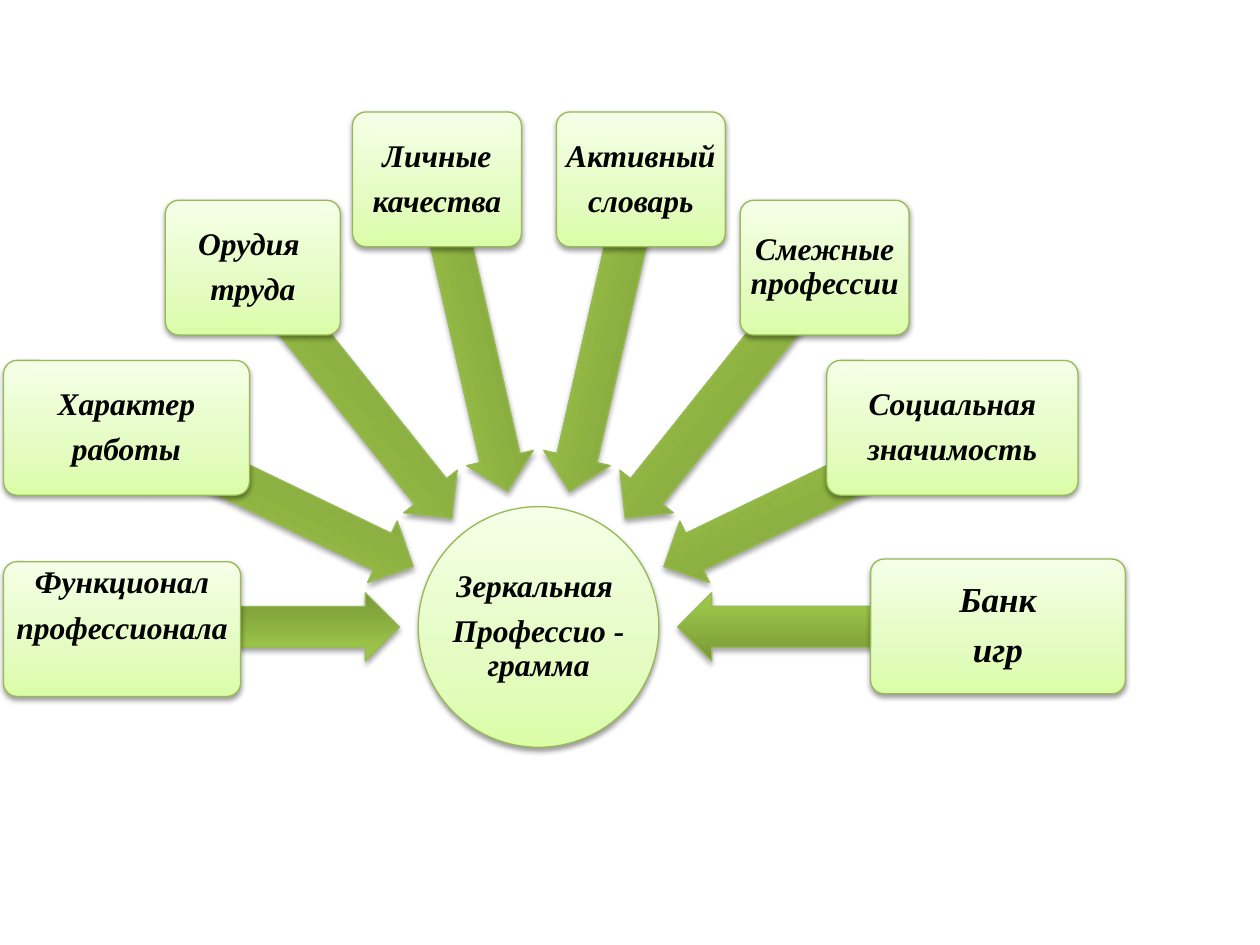
import math

import pptx
import pptx.dml.color
import pptx.enum.shapes
import pptx.enum.text
import pptx.oxml.ns
import pptx.util
from lxml import etree

Pt = pptx.util.Pt
RGBColor = pptx.dml.color.RGBColor
SHAPES = pptx.enum.shapes.MSO_SHAPE

BLACK = RGBColor(0x00, 0x00, 0x00)
OUTLINE = RGBColor(0x98, 0xB9, 0x55)
# Gradient stops from bottom to top: percent, colour
PALE_GREEN = [(0, RGBColor(0xDA, 0xFD, 0xA7)), (35, RGBColor(0xE4, 0xFC, 0xC2)),
              (100, RGBColor(0xF5, 0xFF, 0xE7))]
DEEP_GREEN = [(0, RGBColor(0x77, 0x97, 0x37)), (80, RGBColor(0x9B, 0xC3, 0x48)),
              (100, RGBColor(0x9D, 0xC7, 0x46))]

FONT = "Times New Roman"
HUB_BOX = (239, 289.5, 137.5, 137.5)
CARD_HEIGHT = 77
ARROW_HEIGHT = 39
ARROW_LENGTH = 183
TIP_DISTANCE = 79.5

# Cards clockwise from the left: left, top, width, lines, font size,
# extra bottom inset, arrow length
CARDS = [
    (2, 321, 135.5, ["Функционал", "профессионала"], 18, 26, 160.5),
    (2, 206, 140.5, ["Характер", "работы"], 18, 0, ARROW_LENGTH),
    (94.5, 114.5, 100, ["Орудия ", "труда"], 18, 0, ARROW_LENGTH),
    (201.5, 64, 96.5, ["Личные", "качества"], 18, 0, ARROW_LENGTH),
    (318, 64, 96.5, ["Активный", "словарь"], 18, 0, ARROW_LENGTH),
    (423, 114.5, 96.5, ["Смежные профессии"], 18, 0, ARROW_LENGTH),
    (472.5, 206, 143.5, ["Социальная", "значимость"], 18, 0, ARROW_LENGTH),
    (497.5, 319.5, 145.5, ["Банк", "игр"], 20, 0, ARROW_LENGTH),
]


def points(box):
    return [Pt(value) for value in box]


def add_child(parent, tag, **attributes):
    return etree.SubElement(parent, pptx.oxml.ns.qn(tag), attributes)


def add_glossy_shape(page, kind, box, stops, shadow_alpha, shadow_distance):
    """Add a shape with a vertical gradient, thin outline and soft shadow."""
    shape = page.shapes.add_shape(kind, *points(box))
    shape.line.color.rgb = OUTLINE
    shape.line.width = Pt(0.75)

    # Gradient
    shape.fill.gradient()
    shape.fill.gradient_angle = 90
    properties = shape._element.spPr
    stop_list = properties.find(".//" + pptx.oxml.ns.qn("a:gsLst"))
    for stop in list(stop_list):
        stop_list.remove(stop)
    for percent, colour in stops:
        stop = add_child(stop_list, "a:gs", pos=str(percent * 1000))
        add_child(stop, "a:srgbClr", val=str(colour))

    # Shadow straight below
    shape.shadow.inherit = False
    effects = properties.find(pptx.oxml.ns.qn("a:effectLst"))
    shadow = add_child(effects, "a:outerShdw", blurRad=str(Pt(3.1)),
                       dist=str(Pt(shadow_distance)), dir="5400000",
                       rotWithShape="0")
    colour = add_child(shadow, "a:srgbClr", val=str(BLACK))
    add_child(colour, "a:alpha", val=str(shadow_alpha * 1000))
    return shape


def write_lines(shape, lines, size, inset, extra_bottom=0):
    frame = shape.text_frame
    frame.word_wrap = True
    frame.vertical_anchor = pptx.enum.text.MSO_ANCHOR.MIDDLE
    frame.margin_left = frame.margin_right = frame.margin_top = Pt(inset)
    frame.margin_bottom = Pt(inset + extra_bottom)
    frame.text = "\n".join(lines)
    for para in frame.paragraphs:
        para.alignment = pptx.enum.text.PP_ALIGN.CENTER
        para.line_spacing = 0.9
        para.space_after = Pt(0.35 * size)
        for span in para.runs:
            span.font.name = FONT
            span.font.size = Pt(size)
            span.font.bold = span.font.italic = True
            span.font.color.rgb = BLACK


def add_hub(page, box):
    add_glossy_shape(page, SHAPES.OVAL, box, PALE_GREEN, 38, 1.6)
    # The label uses the full width of the circle
    label = page.shapes.add_textbox(*points(box))
    write_lines(label, ["Зеркальная ", "Профессио - грамма"], 18, 0.7)


def add_arrow(page, hub_box, angle, length):
    """Add an arrow that points at the hub from the given angle."""
    left, top, width, height = hub_box
    distance = TIP_DISTANCE + length / 2
    center_x = left + width / 2 + distance * math.cos(math.radians(angle))
    center_y = top + height / 2 + distance * math.sin(math.radians(angle))
    box = (center_x - length / 2, center_y - ARROW_HEIGHT / 2, length, ARROW_HEIGHT)
    arrow = add_glossy_shape(page, SHAPES.LEFT_ARROW, box, DEEP_GREEN, 35, 1.8)
    arrow.adjustments[0] = 0.6
    arrow.adjustments[1] = 0.5
    arrow.rotation = angle % 360


def add_card(page, box, lines, size, extra_bottom):
    card = add_glossy_shape(page, SHAPES.ROUNDED_RECTANGLE, box, PALE_GREEN, 38, 1.6)
    card.adjustments[0] = 0.1
    write_lines(card, lines, size, 0.6, extra_bottom)


def add_radial_diagram(page, hub_box):
    add_hub(page, hub_box)
    # Arrows fan out evenly over the upper half circle
    step = 180 / (len(CARDS) - 1)
    for index, (left, top, width, lines, size, extra, length) in enumerate(CARDS):
        add_arrow(page, hub_box, 180 + index * step, length)
        add_card(page, (left, top, width, CARD_HEIGHT), lines, size, extra)


def main():
    deck = pptx.Presentation()
    deck.slide_width = Pt(720)
    deck.slide_height = Pt(540)
    page = deck.slides.add_slide(deck.slide_layouts[6])
    add_radial_diagram(page, HUB_BOX)
    deck.save("out.pptx")


if __name__ == "__main__":
    main()
